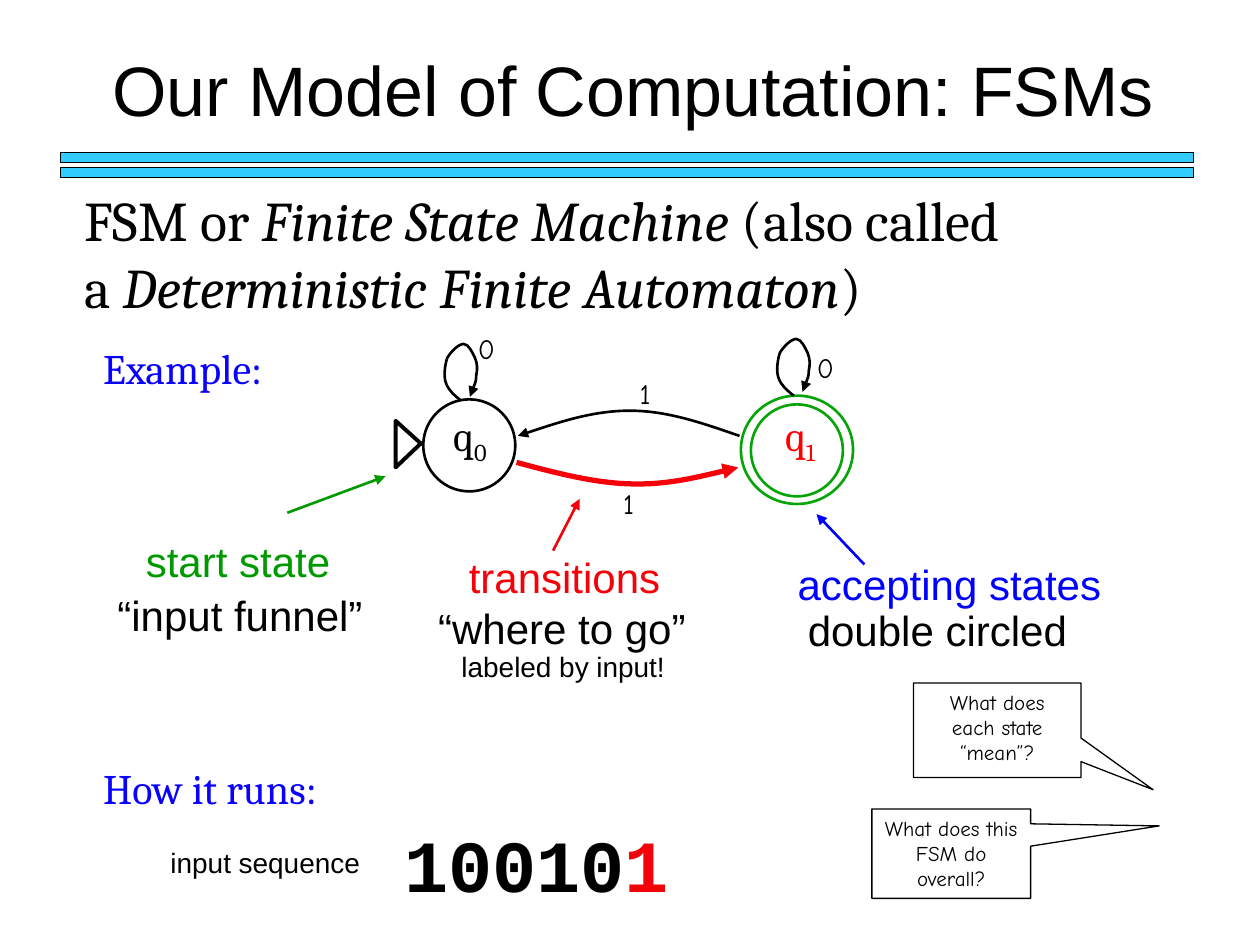
from dataclasses import dataclass

from lxml.etree import SubElement
from pptx import Presentation
from pptx.dml.color import RGBColor
from pptx.enum.shapes import MSO_CONNECTOR as Link, MSO_SHAPE as Shape
from pptx.enum.text import MSO_ANCHOR as Anchor, MSO_AUTO_SIZE as AutoSize, PP_ALIGN as Align
from pptx.oxml.ns import qn
from pptx.util import Inches, Pt


@dataclass(frozen=True)
class Theme:
    black: str = "000000"
    bar: str = "33CCFF"
    heading: str = "0900FF"
    accept: str = "0000FF"
    ring: str = "06A407"
    start: str = "009900"
    active: str = "F3020A"
    label: str = "FF0000"
    sans: str = "Arial"
    serif: str = "Cambria"
    hand: str = "Comic Neue"
    mono: str = "Courier New"
    title: int = 40
    sequence: int = 42
    lead: int = 32
    body: int = 24
    small: int = 16
    note: int = 12
    thin: float = 0.75
    normal: float = 1.5
    medium: float = 2.25
    thick: float = 3


THEME = Theme()
CELLS_PER_INCH = 10
LOOP = [(0, 0), (-0.5, -0.4), (-1, -0.8), (-1.2, -1.4), (-1.4, -1.9), (-1.3, -2.8),
        (-1.1, -3.4), (-0.8, -3.9), (-0.2, -4.5), (0.2, -4.5), (0.6, -4.5), (0.9, -3.8),
        (1.1, -3.4), (1.3, -2.9), (1.3, -2.5), (1.2, -2), (1.2, -1.5), (0.9, -0.9), (0.7, -0.3)]


def cells(*counts):
    return [Inches(count / CELLS_PER_INCH) for count in counts]


def add_span(para, text, font, size, color=THEME.black, bold=False, italic=False, base=None):
    span = para.add_run()
    span.text = text
    span.font.name = font
    span.font.size = Pt(size)
    span.font.bold = bold
    span.font.italic = italic
    span.font.color.rgb = RGBColor.from_string(color)
    if base is not None:
        span.font._element.set("baseline", str(base * 1000))


def set_text(shape, spans, align=Align.CENTER, anchor=Anchor.MIDDLE, wrap=True):
    frame = shape.text_frame
    frame.word_wrap = wrap
    frame.auto_size = AutoSize.NONE
    frame.vertical_anchor = anchor
    para = frame.paragraphs[0]
    para.alignment = align
    for text, font, size, *style in spans:
        options = style[1] if len(style) > 1 else {}
        add_span(para, text, font, size, style[0] if style else THEME.black, **options)


def add_text(page, place, *spans, **layout):
    set_text(page.shapes.add_textbox(*cells(*place)), spans, **layout)


def add_label(page, place, *spans):
    add_text(page, place, *spans, wrap=False)


def add_outline(shape, color, width):
    shape.shadow.inherit = False
    shape.line.color.rgb = RGBColor.from_string(color)
    shape.line.width = Pt(width)


def add_preset(shapes, kind, place, color, width, fill=None):
    shape = shapes.add_shape(kind, *cells(*place))
    add_outline(shape, color, width)
    if fill:
        shape.fill.solid()
        shape.fill.fore_color.rgb = RGBColor.from_string(fill)
    else:
        shape.fill.background()
    return shape


def add_arrowhead(shape, end):
    SubElement(shape.line._get_or_add_ln(), qn(f"a:{end}"), type="triangle")


def add_arrow(page, start, tip, color):
    arrow = page.shapes.add_connector(Link.STRAIGHT, *cells(*start, *tip))
    arrow.line.color.rgb = RGBColor.from_string(color)
    arrow.line.width = Pt(THEME.normal)
    add_arrowhead(arrow, "tailEnd")
    SubElement(arrow._element.spPr, qn("a:effectLst"))


def add_outline_path(page, points, color, width, close=False):
    start, *rest = [cells(*point) for point in points]
    builder = page.shapes.build_freeform(*start, scale=1.0)
    builder.add_line_segments(rest, close=close)
    shape = builder.convert_to_shape()
    shape.fill.background()
    add_outline(shape, color, width)
    return shape


def add_curve(page, points, color, width, end="tailEnd"):
    curve = add_outline_path(page, points, color, width)
    outline = next(curve._element.iter(qn("a:pathLst")))[0]
    segments = outline.findall(qn("a:lnTo"))
    for first in range(0, len(segments), 3):
        bend = SubElement(outline, qn("a:cubicBezTo"))
        for segment in segments[first:first + 3]:
            bend.append(segment[0])
            outline.remove(segment)
    add_arrowhead(curve, end)


def add_loop(page, col, row):
    points = [(col + across, row + down) for across, down in LOOP]
    add_curve(page, points, THEME.black, THEME.normal)


def add_callout(page, place, tip, text):
    callout = add_preset(page.shapes, Shape.RECTANGULAR_CALLOUT, place, THEME.black, THEME.thin)
    callout.adjustments[0], callout.adjustments[1] = tip
    set_text(callout, [(text, THEME.hand, THEME.note)], anchor=Anchor.TOP)


def add_heading(page):
    bars = page.shapes.add_group_shape()
    for row in (12.1, 13.3):
        add_preset(bars.shapes, Shape.RECTANGLE, (4.8, row, 89.9, 0.8),
                   THEME.black, THEME.thin, THEME.bar)
    title = page.shapes.title
    title.left, title.top, title.width, title.height = cells(7.7, 3.2, 85.1, 7.7)
    set_text(title, [("Our Model of Computation: FSMs", THEME.sans, THEME.title)],
             anchor=Anchor.TOP)


def add_intro(page):
    slanted = (THEME.black, {"italic": True})
    lead = (THEME.serif, THEME.lead)
    add_text(page, (5.7, 14.2, 75.1, 11.7),
             ("FSM or ", *lead), ("Finite State Machine ", *lead, *slanted),
             ("(also called a ", *lead), ("Deterministic Finite Automaton", *lead, *slanted),
             (")", *lead), align=Align.LEFT)
    for text, row in (("Example:", 26.7), ("How it runs:", 60)):
        add_text(page, (7.2, row, 38.6, 5), (text, THEME.serif, THEME.body, THEME.heading),
                 align=Align.LEFT)


def add_machine(page):
    for place, color in (((33.6, 31.7, 7.3, 7.3), THEME.black),
                         ((59.6, 32.1, 7.3, 7.3), THEME.ring),
                         ((58.8, 31.4, 8.9, 8.6), THEME.ring)):
        add_preset(page.shapes, Shape.OVAL, place, color, THEME.normal)
    add_curve(page, [(41, 36.7), (44, 37.5), (47, 38.3), (49.9, 38.4),
                     (52.8, 38.5), (55.7, 37.8), (58.6, 37.1)], THEME.active, THEME.thick)
    add_curve(page, [(41.1, 34.6), (44.1, 33.6), (47.1, 32.6), (50, 32.6),
                     (53, 32.6), (55.8, 33.6), (58.7, 34.6)],
              THEME.black, THEME.normal, "headEnd")
    add_loop(page, 36.6, 31.8)
    add_loop(page, 63, 31.4)
    add_outline_path(page, [(31.4, 33.4), (31.4, 37.1), (33.4, 35.2)],
                     THEME.black, THEME.medium, close=True)
    for text, col, row in (("1", 49.6, 29.4), ("0", 37, 25.8), ("1", 48.3, 38.1), ("0", 63.9, 27.3)):
        add_label(page, (col, row, 3.2, 3.7), (text, THEME.hand, THEME.small))
    for digit, col, color in (("0", 34.9, THEME.black), ("1", 61.1, THEME.label)):
        add_label(page, (col, 32.2, 4.8, 5.1), ("q", THEME.serif, THEME.body, color),
                  (digit, THEME.serif, THEME.body, color, {"base": -25}))


def add_captions(page):
    for text, place, color in (
            ("start state", (10.6, 42, 16.6, 5), THEME.start),
            ("“input funnel”", (8.3, 46.3, 21.5, 5), THEME.black),
            ("accepting states", (62.3, 43.8, 26.1, 5), THEME.accept),
            ("double circled", (63.1, 47.5, 22.6, 5), THEME.black),
            ("transitions", (36.2, 43.3, 17.2, 5), THEME.active),
            ("“where to go”", (33.8, 47.3, 21.6, 5), THEME.black)):
        add_label(page, place, (text, THEME.sans, THEME.body, color))
    for text, place in (("labeled by input!", (35.6, 51, 18.2, 3.7)),
                        ("input sequence", (12.5, 66.6, 17.1, 3.7))):
        add_label(page, place, (text, THEME.sans, THEME.small))
    add_arrow(page, (22.8, 40.7), (30.6, 37.8), THEME.start)
    add_arrow(page, (68.6, 44.8), (64.8, 40.8), THEME.accept)
    add_arrow(page, (43.9, 43.7), (46, 39.6), THEME.active)


def add_run(page):
    digits = (THEME.mono, THEME.sequence)
    bold = {"bold": True}
    add_text(page, (31.1, 64.5, 36.7, 8), ("10010", *digits, THEME.black, bold),
             ("1", *digits, THEME.active, bold), align=Align.LEFT, anchor=Anchor.TOP)
    add_callout(page, (69.2, 64.2, 12.6, 7.1), (1.31, -0.31), "What does this FSM do overall?")
    add_callout(page, (72.5, 54.2, 13.3, 7.5), (0.93, 0.63), "What does each state “mean”?")


def main():
    deck = Presentation()
    deck.slide_width, deck.slide_height = cells(100, 75)
    page = deck.slides.add_slide(deck.slide_layouts[5])
    for build in (add_heading, add_intro, add_machine, add_captions, add_run):
        build(page)
    deck.save("out.pptx")


if __name__ == "__main__":
    main()
